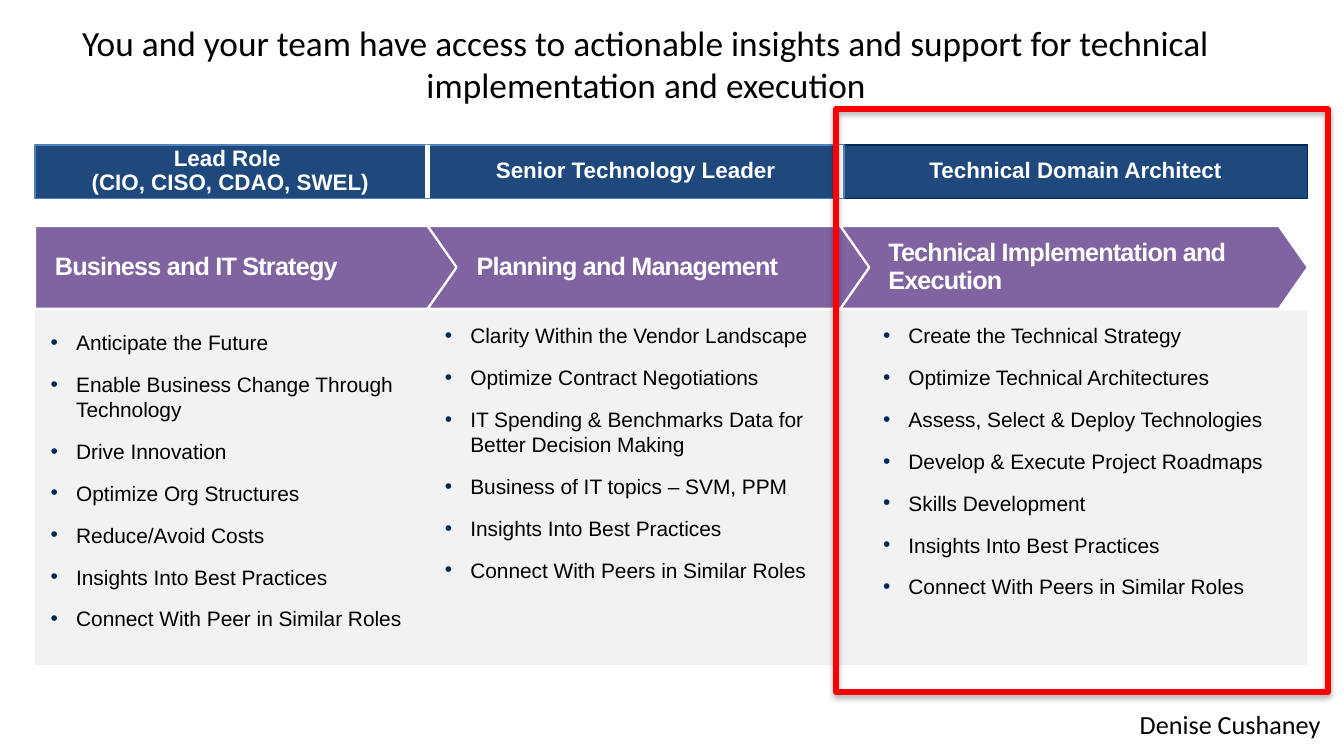
from lxml import etree
from pptx import Presentation
from pptx import util as u
from pptx.dml.color import RGBColor
from pptx.enum import shapes, text
from pptx.oxml import parse_xml
from pptx.oxml.ns import nsdecls, qn

WHITE = RGBColor(0xFF, 0xFF, 0xFF)
BLACK = RGBColor(0, 0, 0)
GREY = RGBColor(0xF2, 0xF2, 0xF2)
NAVY = RGBColor(0x1F, 0x49, 0x7D)
BLUE = RGBColor(0x4F, 0x81, 0xBD)
DARK = RGBColor(0x00, 0x28, 0x56)
PURPLE = RGBColor(0x80, 0x64, 0xA2)
RED = RGBColor(0xFF, 0, 0)

KIND = shapes.MSO_SHAPE
LEFT, CENTER = text.PP_ALIGN.LEFT, text.PP_ALIGN.CENTER
MIDDLE = text.MSO_ANCHOR.MIDDLE

deck = Presentation()
deck.slide_width, deck.slide_height = u.Cm(25.4), u.Cm(14.29)
slide = deck.slides.add_slide(deck.slide_layouts[6])


def block(kind, x, y, w, h, fill=None, line=None, width=0.75):
    """Add a flat preset shape; no fill or line colour means none is drawn."""
    shape = slide.shapes.add_shape(kind, u.Cm(x), u.Cm(y), u.Cm(w), u.Cm(h))
    shape.shadow.inherit = False
    for part, color in ((shape.fill, fill), (shape.line.fill, line)):
        if color is None:
            part.background()
        else:
            part.solid()
            part.fore_color.rgb = color
    if line is not None:
        shape.line.width = u.Pt(width)
    return shape


def write(para, words, size, color=BLACK, font="Arial", bold=False, align=LEFT):
    """Add words as runs, with a line break at each newline."""
    para.alignment = align
    for i, line in enumerate(words.split("\n")):
        if i:
            para.add_line_break()
        run = para.add_run()
        run.text = line
        run.font.size, run.font.name, run.font.bold = u.Pt(size), font, bold
        run.font.color.rgb = color


block(KIND.RECTANGLE, 0.66, 5.87, 24.05, 6.7, GREY)

# Title and name
for words, size, align, place in (
    ("You and your\u00a0team have access to actionable insights and support "
     "for technical implementation and execution",
     18.9, CENTER, (0.43, 0.2, 23.57, 2.01)),
    ("Denise Cushaney", 14, LEFT, (21.29, 13.26, 4.11, 1)),
):
    frame = slide.shapes.add_textbox(*map(u.Cm, place)).text_frame
    frame.word_wrap = True
    frame.vertical_anchor = MIDDLE if align == CENTER else text.MSO_ANCHOR.TOP
    write(frame.paragraphs[0], words, size, font="Calibri", align=align)

# Stage arrows: kind, left, width, indent, side inset, words
for kind, x, w, indent, pad, words in (
    (KIND.PENTAGON, 0.66, 8.13, 0.13, 0.25, "Business and IT Strategy"),
    (KIND.CHEVRON, 8.08, 9.19, 0.13, 0.25, "Planning and Management"),
    (KIND.CHEVRON, 15.88, 8.84, 0.36, 0, "Technical Implementation and Execution"),
):
    arrow = block(kind, x, 4.27, w, 1.57, PURPLE, WHITE, 1.25)
    arrow.adjustments[0] = 0.35
    frame = arrow.text_frame
    frame.word_wrap = True
    frame.vertical_anchor = MIDDLE
    frame.margin_left = frame.margin_right = u.Cm(pad)
    para = frame.paragraphs[0]
    para.line_spacing = 0.9
    para._p.get_or_add_pPr().set("marL", str(u.Cm(indent)))
    write(para, words, 13.5, WHITE, bold=True)
    para.runs[0].font._element.set("spc", "-40")

# Role headers
for x, w, edge, words in (
    (0.66, 7.39, BLUE, "Lead Role \n(CIO, CISO, CDAO, SWEL)"),
    (15.95, 8.76, DARK, "Technical Domain Architect"),
    (8.08, 7.87, BLUE, "Senior Technology Leader"),
):
    frame = block(KIND.RECTANGLE, x, 2.74, w, 1.01, NAVY, edge).text_frame
    frame.word_wrap = True
    frame.vertical_anchor = MIDDLE
    frame.paragraphs[0].line_spacing = 0.9
    write(frame.paragraphs[0], words, 12, WHITE, bold=True, align=CENTER)

# Topic lists: left, side inset, top inset, items
for x, side, top, items in (
    (0.71, 0.25, 0.13, (
        "Anticipate the Future", "Enable Business Change Through Technology",
        "Drive Innovation", "Optimize Org Structures", "Reduce/Avoid Costs",
        "Insights Into Best Practices", "Connect With Peer in Similar Roles")),
    (8.41, 0, 0, (
        "Clarity Within the Vendor Landscape", "Optimize Contract Negotiations",
        "IT Spending & Benchmarks Data for Better Decision Making",
        "Business of IT topics – SVM, PPM", "Insights Into Best Practices",
        "Connect With Peers in Similar Roles")),
    (16.69, 0, 0, (
        "Create the Technical Strategy", "Optimize Technical Architectures",
        "Assess, Select & Deploy Technologies",
        "Develop & Execute Project Roadmaps", "Skills Development",
        "Insights Into Best Practices", "Connect With Peers in Similar Roles")),
):
    box = slide.shapes.add_textbox(u.Cm(x), u.Cm(6.1), u.Cm(7.62), u.Cm(6.4))
    frame = box.text_frame
    frame.word_wrap = True
    frame.margin_left = frame.margin_right = u.Cm(side)
    frame.margin_top = frame.margin_bottom = u.Cm(top)
    for i, item in enumerate(items):
        para = frame.add_paragraph() if i else frame.paragraphs[0]
        props = para._p.get_or_add_pPr()
        props.set("marL", str(u.Cm(0.48)))
        props.set("indent", str(u.Cm(-0.48)))
        tint = etree.SubElement(props, qn("a:buClr"))
        etree.SubElement(tint, qn("a:srgbClr")).set("val", str(DARK))
        etree.SubElement(props, qn("a:buFont")).set("typeface", "Arial")
        etree.SubElement(props, qn("a:buChar")).set("char", "•")
        para.space_after = u.Pt(9)
        write(para, item, 11.2)

# Gaps between headers
for x in (8.08, 15.88):
    gap = slide.shapes.add_connector(
        shapes.MSO_CONNECTOR.STRAIGHT, u.Cm(x), u.Cm(2.74), u.Cm(x), u.Cm(3.74))
    gap.line.color.rgb = WHITE
    gap.line.width = u.Pt(3)
    etree.SubElement(gap._element.spPr, qn("a:effectLst"))

# Highlight frame with a soft shadow
mark = block(KIND.RECTANGLE, 15.8, 2.06, 9.3, 11.02, None, RED, 3)
mark._element.spPr.find(qn("a:effectLst")).append(parse_xml(
    f'<a:outerShdw {nsdecls("a")} blurRad="{u.Pt(3.1)}" dist="{u.Pt(1.8)}" '
    'dir="5400000" rotWithShape="0"><a:srgbClr val="000000">'
    '<a:alpha val="35000"/></a:srgbClr></a:outerShdw>'))

deck.save("out.pptx")
